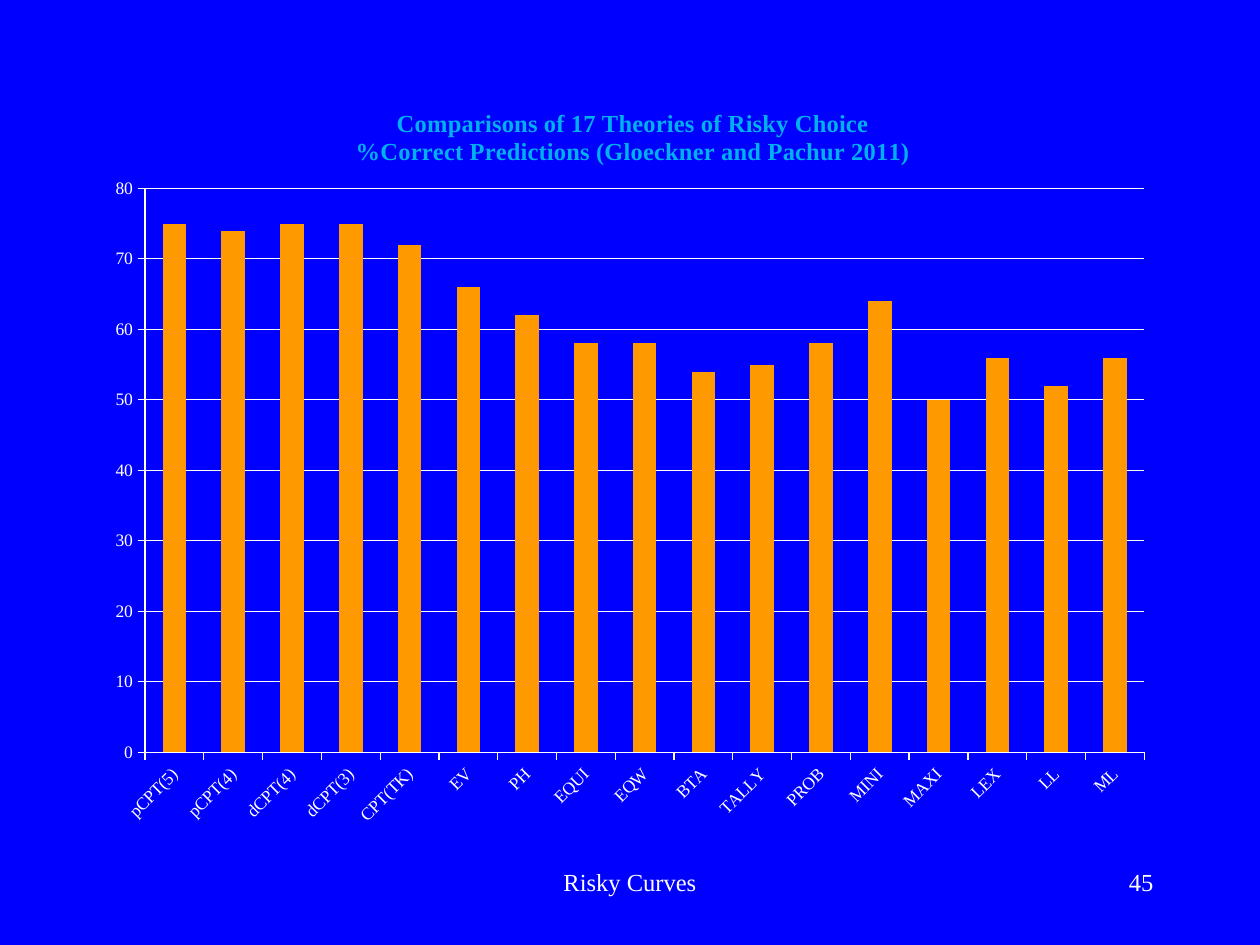
import pptx
import pptx.chart.data
import pptx.dml.color
import pptx.enum.chart
import pptx.enum.text
import pptx.oxml
import pptx.oxml.ns
import pptx.util
from pptx.util import Cm

FONT = "Times New Roman"
COLOURS = {
    "background": "0000FF",
    "text": "FFFFFF",
    "title": "00B0F0",
    "bar": "FF9900",
}
TITLE_LINES = [
    "Comparisons of 17 Theories of Risky Choice",
    "%Correct Predictions (Gloeckner and Pachur 2011)",
]
CORRECT_PREDICTIONS = {
    "pCPT(5)": 75, "pCPT(4)": 74, "dCPT(4)": 75, "dCPT(3)": 75,
    "CPT(TK)": 72, "EV": 66, "PH": 62, "EQUI": 58, "EQW": 58,
    "BTA": 54, "TALLY": 55, "PROB": 58, "MINI": 64, "MAXI": 50,
    "LEX": 56, "LL": 52, "ML": 56,
}


def colour(name):
    return pptx.dml.color.RGBColor.from_string(COLOURS[name])


def format_font(font, size, colour_name="text", bold=False):
    font.name = FONT
    font.size = pptx.util.Pt(size)
    font.bold = bold
    font.color.rgb = colour(colour_name)


def write_text(paragraph, text, size=14, colour_name="text", bold=False,
               align=pptx.enum.text.PP_ALIGN.CENTER):
    paragraph.alignment = align
    run = paragraph.add_run()
    run.text = text
    format_font(run.font, size, colour_name, bold)


def add_footer(slide, text, left, width, align):
    box = slide.shapes.add_textbox(left, Cm(17.35), width, Cm(1.27))
    box.text_frame.word_wrap = True
    write_text(box.text_frame.paragraphs[0], text, align=align)


def set_layout(element, position, target=None, after=None):
    """Place a chart part by fractions of the chart's width and height."""
    for old in element.findall(pptx.oxml.ns.qn("c:layout")):
        element.remove(old)
    parts = [("layoutTarget", target)] if target else []
    parts += [("xMode", "edge"), ("yMode", "edge")] + list(position.items())
    content = "".join(f'<c:{tag} val="{value}"/>' for tag, value in parts)
    layout = pptx.oxml.parse_xml(
        f'<c:layout {pptx.oxml.ns.nsdecls("c")}>'
        f"<c:manualLayout>{content}</c:manualLayout></c:layout>")
    if after is None:
        element.insert(0, layout)
    else:
        after.addnext(layout)


def format_axis(axis):
    axis.major_tick_mark = pptx.enum.chart.XL_TICK_MARK.OUTSIDE
    axis.minor_tick_mark = pptx.enum.chart.XL_TICK_MARK.NONE
    format_font(axis.tick_labels.font, 10)
    format_line(axis.format.line)


def format_line(line):
    line.color.rgb = colour("text")
    line.width = pptx.util.Pt(0.75)


def add_title(chart):
    chart.has_title = True
    title = chart.chart_title
    title.include_in_layout = False
    frame = title.text_frame
    for index, text in enumerate(TITLE_LINES):
        paragraph = frame.add_paragraph() if index else frame.paragraphs[0]
        write_text(paragraph, text, colour_name="title", bold=True)
    element = chart.element.chart.find(pptx.oxml.ns.qn("c:title"))
    set_layout(element, {"x": 0.24, "y": 0.04},
               after=element.find(pptx.oxml.ns.qn("c:tx")))


def add_prediction_chart(slide):
    data = pptx.chart.data.CategoryChartData()
    data.categories = list(CORRECT_PREDICTIONS)
    data.add_series("Series 1", list(CORRECT_PREDICTIONS.values()))
    chart = slide.shapes.add_chart(
        pptx.enum.chart.XL_CHART_TYPE.COLUMN_CLUSTERED,
        Cm(1.91), Cm(1.48), Cm(21.59), Cm(15.45), data).chart
    chart.has_legend = False
    format_font(chart.font, 10)
    add_title(chart)

    # Bars
    plot = chart.plots[0]
    plot.vary_by_categories = False
    plot.gap_width = 150
    fill = plot.series[0].format.fill
    fill.solid()
    fill.fore_color.rgb = colour("bar")

    # Axes and gridlines
    format_axis(chart.category_axis)
    labels = chart.category_axis.tick_labels.font
    format_font(labels, 10)
    text_properties = chart.category_axis._element.find(pptx.oxml.ns.qn("c:txPr"))
    text_properties.find(pptx.oxml.ns.qn("a:bodyPr")).set("rot", "-2700000")
    value_axis = chart.value_axis
    format_axis(value_axis)
    value_axis.minimum_scale, value_axis.maximum_scale = 0, 80
    value_axis.major_unit = 10
    value_axis.has_major_gridlines = True
    format_line(value_axis.major_gridlines.format.line)

    set_layout(chart.element.chart.plotArea,
               {"x": 0.047, "y": 0.15, "w": 0.933, "h": 0.736}, target="inner")


def main():
    presentation = pptx.Presentation()
    presentation.slide_width, presentation.slide_height = Cm(25.4), Cm(19.05)
    slide = presentation.slides.add_slide(presentation.slide_layouts[6])
    slide.background.fill.solid()
    slide.background.fill.fore_color.rgb = colour("background")

    # Footer and slide number
    alignment = pptx.enum.text.PP_ALIGN
    add_footer(slide, "Risky Curves", Cm(8.68), Cm(8.04), alignment.CENTER)
    add_footer(slide, "45", Cm(18.21), Cm(5.29), alignment.RIGHT)

    add_prediction_chart(slide)
    presentation.save("out.pptx")


if __name__ == "__main__":
    main()
